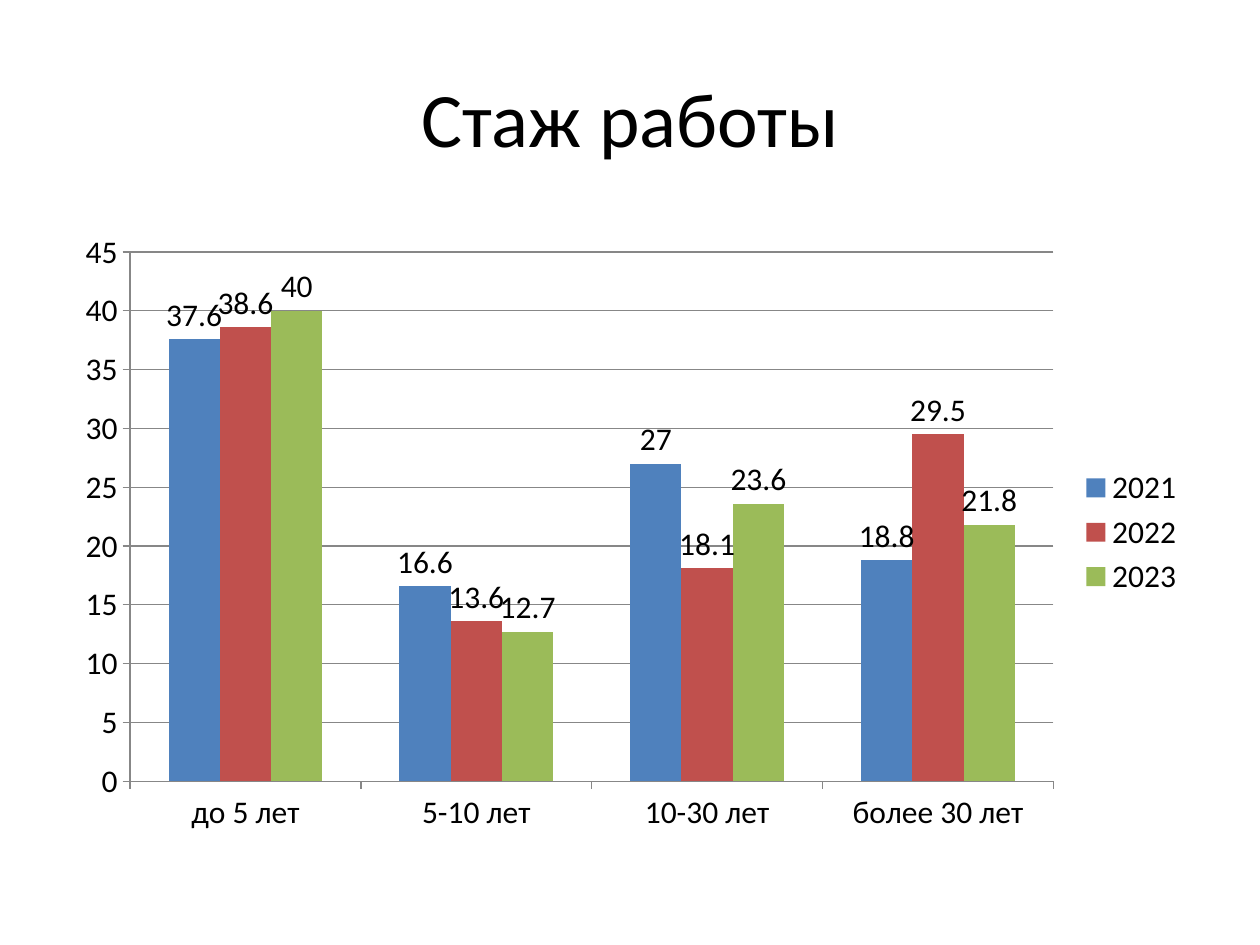
import pptx
import pptx.chart.data
import pptx.dml.color
import pptx.enum.chart
import pptx.enum.text
import pptx.util

Inches = pptx.util.Inches
Pt = pptx.util.Pt
enum = pptx.enum.chart


def color(code):
    return pptx.dml.color.RGBColor.from_string(code)


class Deck:
    face = "Calibri"
    ink = "000000"
    gray = "878787"
    fills = ("4F81BD", "C0504D", "9BBB59")

    def __init__(self, width, height):
        self.show = pptx.Presentation()
        self.show.slide_width = Inches(width)
        self.show.slide_height = Inches(height)
        self.slide = self.show.slides.add_slide(self.show.slide_layouts[6])

    def style(self, font, size):
        font.name = self.face
        font.size = Pt(size)
        font.color.rgb = color(self.ink)

    def title(self, text, box, size):
        frame = self.slide.shapes.add_textbox(*map(Inches, box)).text_frame
        frame.word_wrap = True
        frame.vertical_anchor = pptx.enum.text.MSO_ANCHOR.MIDDLE
        line = frame.paragraphs[0]
        line.text = text
        line.alignment = pptx.enum.text.PP_ALIGN.CENTER
        self.style(line.font, size)

    def stroke(self, line):
        line.color.rgb = color(self.gray)
        line.width = Pt(0.75)

    def columns(self, names, rows, box, size):
        data = pptx.chart.data.CategoryChartData()
        data.categories = names
        for name, vals in rows.items():
            data.add_series(name, vals)
        chart = self.slide.shapes.add_chart(
            enum.XL_CHART_TYPE.COLUMN_CLUSTERED, *map(Inches, box), data
        ).chart
        self.style(chart.font, size)
        chart.has_title = False

        # Legend
        chart.has_legend = True
        chart.legend.position = enum.XL_LEGEND_POSITION.RIGHT
        chart.legend.include_in_layout = False

        # Axes and grid
        for axis in (chart.category_axis, chart.value_axis):
            axis.major_tick_mark = enum.XL_TICK_MARK.OUTSIDE
            axis.minor_tick_mark = enum.XL_TICK_MARK.NONE
            self.stroke(axis.format.line)
        scale = chart.value_axis
        scale.minimum_scale, scale.maximum_scale, scale.major_unit = 0, 45, 5
        scale.has_major_gridlines = True
        self.stroke(scale.major_gridlines.format.line)

        # Columns and their labels
        plot = chart.plots[0]
        plot.vary_by_categories = False
        plot.gap_width = 150
        for series, code in zip(plot.series, self.fills):
            series.format.fill.solid()
            series.format.fill.fore_color.rgb = color(code)
            labels = series.data_labels
            labels.show_value = True
            labels.position = enum.XL_LABEL_POSITION.OUTSIDE_END
            self.style(labels.font, size)


def main():
    deck = Deck(10, 7.5)

    # Heading
    deck.title("Стаж работы", (0.5, 0.3, 9, 1.25), 44)

    # Share of staff by length of service
    deck.columns(
        ("до 5 лет", "5-10 лет", "10-30 лет", "более 30 лет"),
        {
            "2021": (37.6, 16.6, 27, 18.8),
            "2022": (38.6, 13.6, 18.1, 29.5),
            "2023": (40, 12.7, 23.6, 21.8),
        },
        (0.5, 1.75, 9, 4.95),
        18,
    )
    deck.show.save("out.pptx")


if __name__ == "__main__":
    main()
